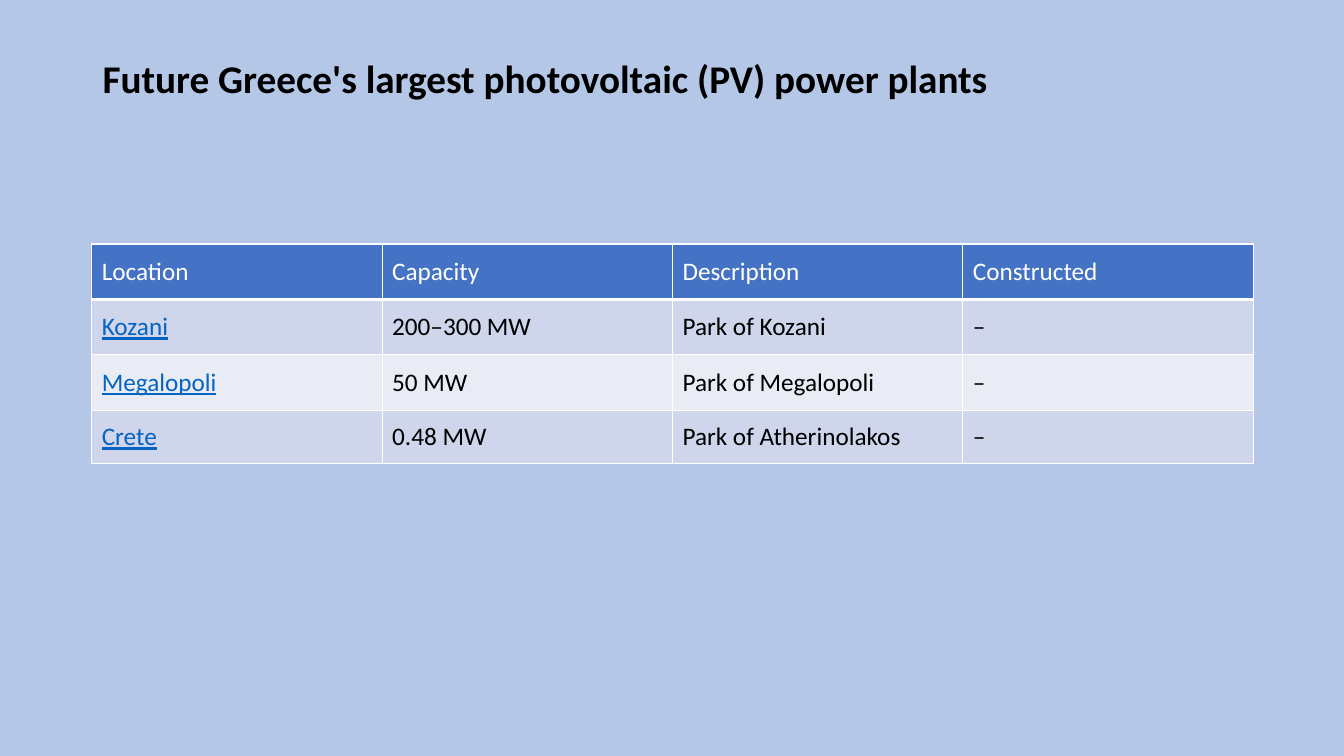
from pptx import Presentation
from pptx.util import Inches, Pt
from pptx.dml.color import RGBColor
from pptx.enum.text import MSO_ANCHOR
from pptx.oxml import parse_xml
from pptx.oxml.ns import nsdecls

# Content
TITLE = "Future Greece's largest photovoltaic (PV) power plants"
PLANTS = [
    ("Location", "Capacity", "Description", "Constructed"),
    ("Kozani", "200–300 MW", "Park of Kozani", "–"),
    ("Megalopoli", "50 MW", "Park of Megalopoli", "–"),
    ("Crete", "0.48 MW", "Park of Atherinolakos", "–"),
]
WIDE, HIGH = 13.33, 7.5
COL = 2.88
ROWS = [0.55, 0.55, 0.55, 0.53]
BACK, HEAD, BANDS = "B4C7E7", "4472C4", ("E9EBF5", "CFD5EA")
BLACK, WHITE, LINK = "000000", "FFFFFF", "0563C1"


def paint(fill, color):
    fill.solid()
    fill.fore_color.rgb = RGBColor.from_string(color)


def write(frame, text, size=18, color=BLACK, bold=False, line=False, gap=None):
    para = frame.paragraphs[0]
    para.line_spacing = gap
    run = para.add_run()
    run.text = text
    font = run.font
    font.name, font.size, font.bold = "Calibri", Pt(size), bold
    if line:
        font.underline = True
    font.color.rgb = RGBColor.from_string(color)


def edge(cell, side, width):
    cell._tc.get_or_add_tcPr().append(parse_xml(
        f'<a:ln{side} {nsdecls("a")} w="{Pt(width)}"><a:solidFill>'
        f'<a:srgbClr val="{WHITE}"/></a:solidFill></a:ln{side}>'))


deck = Presentation()
deck.slide_width, deck.slide_height = Inches(WIDE), Inches(HIGH)
slide = deck.slides.add_slide(deck.slide_layouts[6])
paint(slide.background.fill, BACK)

# Title, raised above the middle of its box by a deep bottom inset
box = slide.shapes.add_textbox(Inches(0.92), Inches(0.4), Inches(11.5), Inches(1.47))
frame = box.text_frame
frame.word_wrap = True
frame.vertical_anchor = MSO_ANCHOR.MIDDLE
frame.margin_bottom = Inches(0.72)
write(frame, TITLE, size=28, bold=True, gap=0.9)

# Table of plants
count = len(PLANTS[0])
table = slide.shapes.add_table(
    len(PLANTS), count, Inches(0.91), Inches(2.42),
    Inches(COL * count), Inches(sum(ROWS))).table
for col in table.columns:
    col.width = Inches(COL)
for r, plant in enumerate(PLANTS):
    table.rows[r].height = Inches(ROWS[r])
    top = r == 0
    for c, text in enumerate(plant):
        cell = table.cell(r, c)
        cell.vertical_anchor = MSO_ANCHOR.MIDDLE
        for side in "LRTB":
            edge(cell, side, 3 if top and side == "B" else 1)
        paint(cell.fill, HEAD if top else BANDS[r % 2])
        link = c == 0 and not top
        color = WHITE if top else LINK if link else BLACK
        write(cell.text_frame, text, color=color, line=link)

deck.save("out.pptx")
